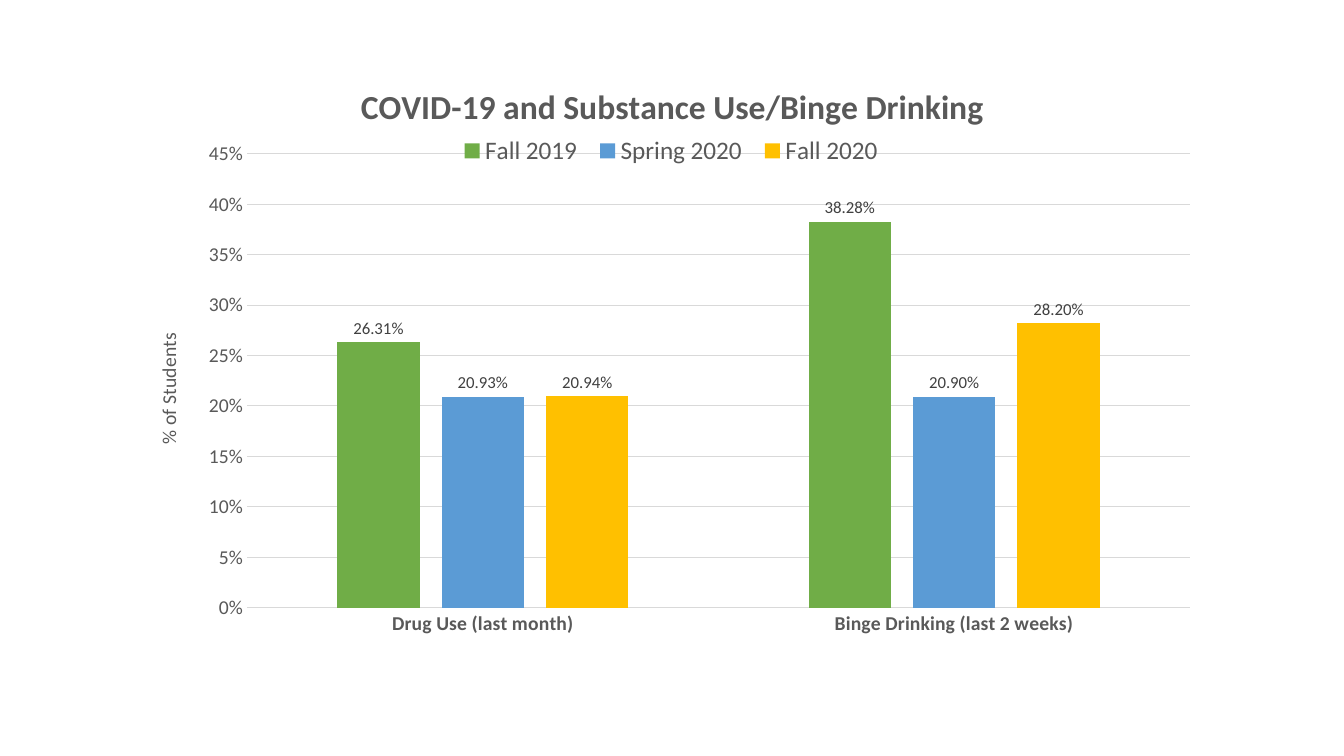
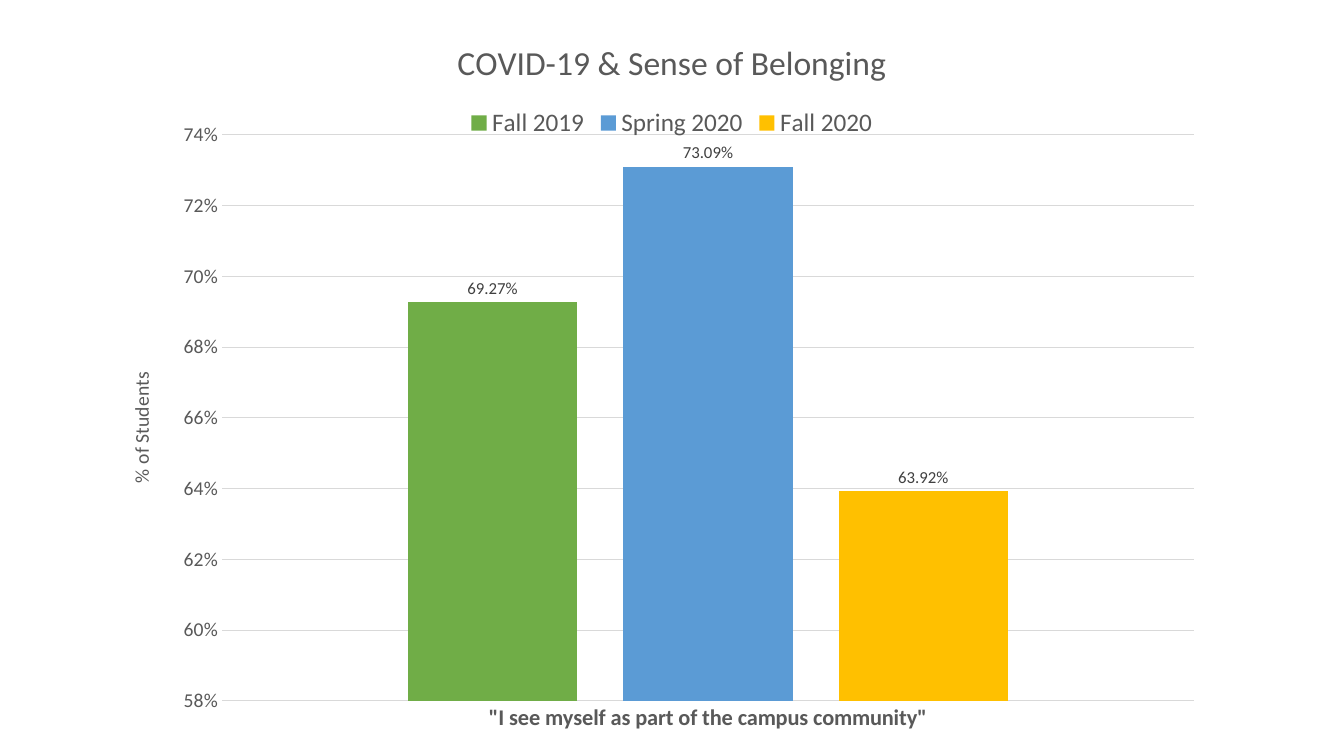
from lxml import etree
from pptx import Presentation
from pptx.chart.data import CategoryChartData
from pptx.dml.color import RGBColor
from pptx.enum.chart import XL_CHART_TYPE as ChartType
from pptx.enum.chart import XL_LABEL_POSITION as LabelPosition
from pptx.enum.chart import XL_LEGEND_POSITION as LegendPosition
from pptx.enum.chart import XL_TICK_MARK as TickMark
from pptx.oxml.ns import qn
from pptx.util import Cm, Pt

FONT = "Calibri"
TEXT, LABEL, RULE = "595959", "404040", "D9D9D9"
TERMS = {"Fall 2019": "70AD47", "Spring 2020": "5B9BD5", "Fall 2020": "FFC000"}


def color(value):
    """Turn a hex string into a colour."""
    return RGBColor.from_string(value)


def style_font(font, size, bold=False, ink=TEXT):
    """Set the face, size, weight and colour of a font."""
    font.name = FONT
    font.size = Pt(size)
    font.bold = bold
    font.color.rgb = color(ink)


def style_rule(line):
    """Give a line the thin grey look of the gridlines."""
    line.color.rgb = color(RULE)
    line.width = Pt(0.75)


def write_title(owner, text, size, bold=False):
    """Write the title of a chart or of an axis."""
    owner.has_title = True
    frame = (owner.chart_title if hasattr(owner, "chart_title") else owner.axis_title).text_frame
    frame.text = text
    style_font(frame.paragraphs[0].runs[0].font, size, bold)


def place_part(part, index, percents, inner=False):
    """Fix a chart part at x, y, width and height in percent of the chart."""
    for old in part.findall(qn("c:layout")):
        part.remove(old)
    layout = etree.Element(qn("c:layout"))
    manual = etree.SubElement(layout, qn("c:manualLayout"))
    settings = [("layoutTarget", "inner")] if inner else []
    settings += [("xMode", "edge"), ("yMode", "edge")]
    settings += [(key, str(percent / 100)) for key, percent in zip("xywh", percents)]
    for tag, value in settings:
        etree.SubElement(manual, qn(f"c:{tag}")).set("val", value)
    part.insert(index, layout)


def style_axes(chart, category_size, scale):
    """Style both axes and set the lowest, highest and step values."""
    categories, shares = chart.category_axis, chart.value_axis
    style_font(categories.tick_labels.font, category_size, bold=True)
    style_rule(categories.format.line)
    style_font(shares.tick_labels.font, 14)
    shares.tick_labels.number_format = "0%"
    shares.tick_labels.number_format_is_linked = False
    shares.minimum_scale, shares.maximum_scale, shares.major_unit = scale
    shares.format.line.fill.background()
    style_rule(shares.major_gridlines.format.line)
    write_title(shares, "% of Students", 14)
    for axis in (categories, shares):
        axis.major_tick_mark = axis.minor_tick_mark = TickMark.NONE


def style_columns(plot):
    """Set the spacing, colours and value labels of the columns."""
    plot.gap_width, plot.overlap = 219, -27
    plot.vary_by_categories = False
    for term in plot.series:
        term.format.fill.solid()
        term.format.fill.fore_color.rgb = color(TERMS[term.name])
        term.invert_if_negative = False
    plot.has_data_labels = True
    labels = plot.data_labels
    labels.show_value = True
    labels.position = LabelPosition.OUTSIDE_END
    labels.number_format = "0.00%"
    labels.number_format_is_linked = False
    style_font(labels.font, 12, ink=LABEL)


def add_legend(chart, position, percents=None):
    """Add the legend, at a fixed place if one is given."""
    chart.has_legend = True
    legend = chart.legend
    legend.position = position
    legend.include_in_layout = False
    style_font(legend.font, 18)
    if percents:
        place_part(chart.element.find(f".//{qn('c:legend')}"), 1, percents)


def add_survey_chart(deck, box, title, shares, scale, plot_box, category_size, bold_title=False):
    """Add a slide with a column chart of the shares per term."""
    slide = deck.slides.add_slide(deck.slide_layouts[6])
    data = CategoryChartData(number_format="0.00%")
    data.categories = list(shares)
    for term, values in zip(TERMS, zip(*shares.values())):
        data.add_series(term, values)
    frame = slide.shapes.add_chart(ChartType.COLUMN_CLUSTERED, *map(Cm, box), data)
    chart = frame.chart
    style_font(chart.font, 10, ink="000000")
    write_title(chart, title, 24, bold_title)
    style_axes(chart, category_size, scale)
    style_columns(chart.plots[0])
    place_part(chart.element.find(f".//{qn('c:plotArea')}"), 0, plot_box, inner=True)
    return chart


def main():
    """Build and save the two slides."""
    deck = Presentation()
    deck.slide_width, deck.slide_height = Cm(33.87), Cm(19.05)
    substance = add_survey_chart(
        deck, (3.35, 1.5, 27.18, 16.05),
        "COVID-19 and Substance Use/Binge Drinking",
        {"Drug Use (last month)": (0.2631, 0.2093, 0.2094),
         "Binge Drinking (last 2 weeks)": (0.3828, 0.209, 0.282)},
        (0, 0.45, 0.05), (10.6, 14.8, 87.4, 71.3), 14, bold_title=True)
    add_legend(substance, LegendPosition.BOTTOM, (29.4, 11.6, 41, 5.5))
    belonging = add_survey_chart(
        deck, (1.98, 0.36, 29.9, 18.31),
        "COVID-19 & Sense of Belonging",
        {'"I see myself as part of the campus community"': (0.6927, 0.7309, 0.6392)},
        (0.58, 0.74, 0.02), (12.1, 16.6, 81.9, 77.9), 16)
    add_legend(belonging, LegendPosition.TOP)
    deck.save("out.pptx")


if __name__ == "__main__":
    main()
